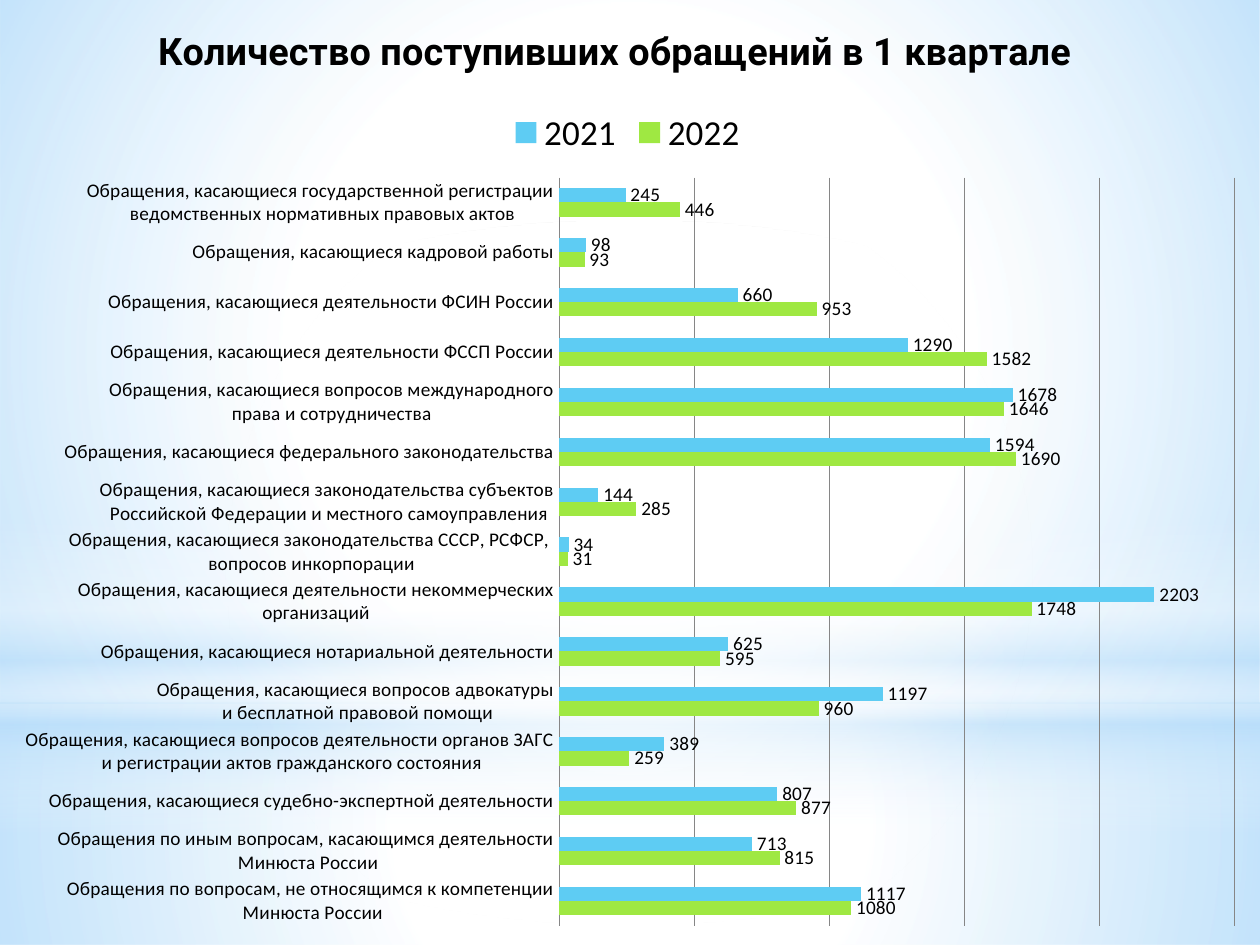
import lxml.etree
import pptx
import pptx.chart.data
import pptx.dml.color
import pptx.enum.chart
import pptx.enum.shapes
import pptx.oxml
import pptx.oxml.ns
import pptx.util

Inches = pptx.util.Inches
Pt = pptx.util.Pt
qn = pptx.oxml.ns.qn
CENTER = '<a:path path="circle"><a:fillToRect l="50000" t="50000" r="50000" b="50000"/></a:path>'
DOWN = '<a:lin ang="5400000" scaled="0"/>'
SERIES = (("2022", "9FE842"), ("2021", "5ECCF3"))
APPEALS = (
    ("Обращения по вопросам, не относящимся к компетенции\n Минюста России", 1080, 1117),
    ("Обращения по иным вопросам, касающимся деятельности\n Минюста России", 815, 713),
    ("Обращения, касающиеся судебно-экспертной деятельности", 877, 807),
    ("Обращения, касающиеся вопросов деятельности органов ЗАГС\n и регистрации актов гражданского состояния", 259, 389),
    ("Обращения, касающиеся вопросов адвокатуры\n и бесплатной правовой помощи", 960, 1197),
    ("Обращения, касающиеся нотариальной деятельности", 595, 625),
    ("Обращения, касающиеся деятельности некоммерческих организаций", 1748, 2203),
    ("Обращения, касающиеся законодательства СССР, РСФСР, \nвопросов инкорпорации", 31, 34),
    ("Обращения, касающиеся законодательства субъектов\n Российской Федерации и местного самоуправления", 285, 144),
    ("Обращения, касающиеся федерального законодательства", 1690, 1594),
    ("Обращения, касающиеся вопросов международного\nправа и сотрудничества", 1646, 1678),
    ("Обращения, касающиеся деятельности ФССП России", 1582, 1290),
    ("Обращения, касающиеся деятельности ФСИН России", 953, 660),
    ("Обращения, касающиеся кадровой работы", 93, 98),
    ("Обращения, касающиеся государственной регистрации\n ведомственных нормативных правовых актов", 446, 245),
)


def color(value):
    return pptx.dml.color.RGBColor.from_string(value)


class SlideBuilder:
    """Holds the style and the current slide, and adds its elements."""

    text_color = "000000"
    label_font = "Calibri"
    title_font = "Roboto"
    grid_color = "868686"

    def __init__(self, slide):
        self.slide = slide

    def set_font(self, font, size, name, bold=False):
        font.size, font.name, font.bold = Pt(size), name, bold
        font.color.rgb = color(self.text_color)

    def glow(self, kind, box, stops, direction):
        shape = self.slide.shapes.add_shape(kind, *map(Inches, box))
        shape.shadow.inherit = False
        shape.line.fill.background()
        shape.fill.background()
        stop_xml = "".join(
            f'<a:gs pos="{position * 1000}"><a:srgbClr val="{value}">'
            f'<a:alpha val="{opacity * 1000}"/></a:srgbClr></a:gs>'
            for position, value, opacity in stops)
        gradient = pptx.oxml.parse_xml(
            f'<a:gradFill {pptx.oxml.ns.nsdecls("a")} rotWithShape="1">'
            f"<a:gsLst>{stop_xml}</a:gsLst>{direction}</a:gradFill>")
        properties = shape.element.spPr
        properties.replace(properties.find(qn("a:noFill")), gradient)

    def place(self, element, **position):
        for old in element.findall(qn("c:layout")):
            element.remove(old)
        layout = lxml.etree.Element(qn("c:layout"))
        manual = lxml.etree.SubElement(layout, qn("c:manualLayout"))
        for name, value in position.items():
            lxml.etree.SubElement(manual, qn(f"c:{name}")).set("val", str(value))
        overlay = element.find(qn("c:overlay"))
        if overlay is None:
            element.insert(0, layout)
        else:
            overlay.addprevious(layout)

    def bar_chart(self, box, title, series, rows):
        data = pptx.chart.data.CategoryChartData()
        categories, *columns = zip(*rows)
        data.categories = categories
        for (name, _), values in zip(series, columns):
            data.add_series(name, values)
        chart = self.slide.shapes.add_chart(
            pptx.enum.chart.XL_CHART_TYPE.BAR_CLUSTERED, *map(Inches, box), data).chart
        self.set_font(chart.font, 18, self.title_font)
        self.chart_title(chart, title)
        self.chart_legend(chart)
        self.chart_axes(chart)
        self.chart_bars(chart.plots[0], series)
        self.place(chart.element.chart.plotArea, layoutTarget="inner", xMode="edge",
                   yMode="edge", x=0.444, y=0.188, w=0.536, h=0.792)

    def chart_title(self, chart, text):
        chart.has_title = True
        run = chart.chart_title.text_frame.paragraphs[0].add_run()
        run.text = text
        self.set_font(run.font, 21.6, self.title_font, True)
        self.place(chart.element.chart.find(qn("c:title")),
                   xMode="edge", yMode="edge", x=0.12, y=0.02)

    def chart_legend(self, chart):
        chart.has_legend = True
        chart.legend.position = pptx.enum.chart.XL_LEGEND_POSITION.TOP
        chart.legend.include_in_layout = False
        self.set_font(chart.legend.font, 20, self.label_font)
        self.place(chart.element.chart.find(qn("c:legend")),
                   xMode="edge", yMode="edge", x=0.4, y=0.11)

    def chart_axes(self, chart):
        values, categories = chart.value_axis, chart.category_axis
        values.minimum_scale, values.maximum_scale, values.major_unit = 0, 2500, 500
        values.visible = False
        values.has_major_gridlines = True
        categories.major_tick_mark = pptx.enum.chart.XL_TICK_MARK.NONE
        self.set_font(categories.tick_labels.font, 11, self.label_font)
        for line in (values.major_gridlines.format.line, categories.format.line):
            line.color.rgb = color(self.grid_color)
            line.width = Pt(0.75)

    def chart_bars(self, plot, series):
        plot.gap_width = 150
        plot.overlap = 0
        plot.vary_by_categories = False
        for bars, (_, fill) in zip(plot.series, series):
            bars.format.fill.solid()
            bars.format.fill.fore_color.rgb = color(fill)
            labels = bars.data_labels
            labels.show_value = True
            labels.position = pptx.enum.chart.XL_LABEL_POSITION.OUTSIDE_END
            self.set_font(labels.font, 11, self.label_font)


def main():
    presentation = pptx.Presentation()
    presentation.slide_width, presentation.slide_height = Inches(10), Inches(7.5)
    builder = SlideBuilder(presentation.slides.add_slide(presentation.slide_layouts[6]))
    rectangle = pptx.enum.shapes.MSO_SHAPE.RECTANGLE
    white, blue = "FFFFFF", "B4DCFA"
    builder.glow(rectangle, (0, 5.58, 10, 1.92),
                 ((0, white, 91), (37, white, 76), (100, blue, 79)), CENTER)
    builder.glow(rectangle, (0, 0, 10, 5.58),
                 ((0, white, 89), (48, white, 62), (100, blue, 79)), CENTER)
    builder.glow(rectangle, (0, 4.12, 10, 2.5),
                 ((0, white, 0), (29, white, 30), (45, blue, 40),
                  (55, white, 26), (65, blue, 60), (100, white, 0)), DOWN)
    builder.glow(pptx.enum.shapes.MSO_SHAPE.OVAL, (0, 1.75, 10, 5.58),
                 ((0, white, 100), (56, white, 0)), CENTER)
    builder.bar_chart((0, 0, 10, 7.5), "Количество поступивших обращений в 1 квартале",
                      SERIES, APPEALS)
    presentation.save("out.pptx")


if __name__ == "__main__":
    main()
